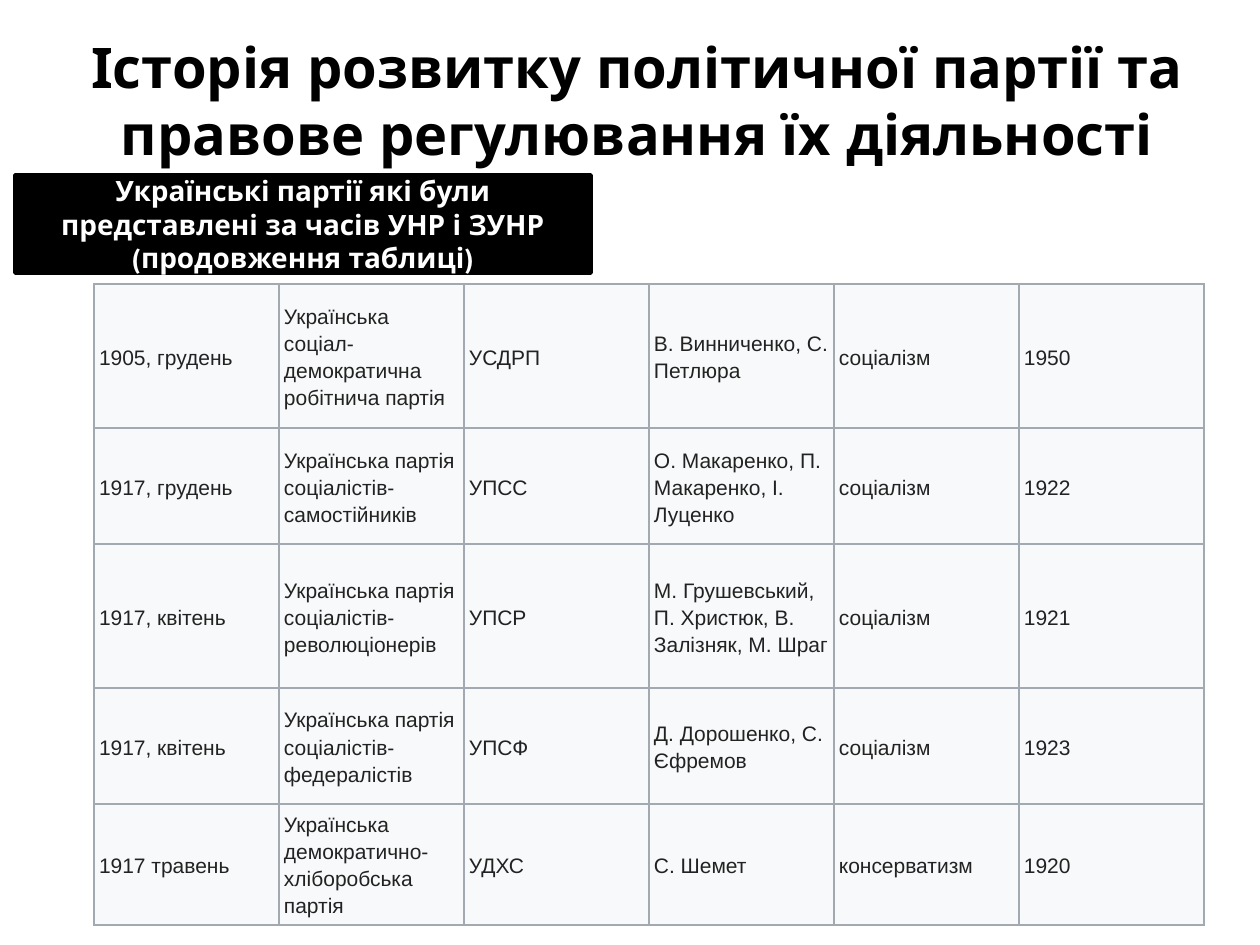
import pptx
import pptx.util
import pptx.dml.color
import pptx.enum.shapes
import pptx.enum.text
import pptx.oxml
import pptx.oxml.ns

# Content
TITLE = "Історія розвитку політичної партії та правове регулювання їх діяльності"
SUBTITLE = "Українські партії які були представлені за часів УНР і ЗУНР (продовження таблиці)"
# Founders' names are joined by no-break spaces after each comma
PARTIES = [
    ("1905, грудень", "Українська соціал-демократична робітнича партія", "УСДРП",
     "В. Винниченко, С. Петлюра", "соціалізм", "1950"),
    ("1917, грудень", "Українська партія соціалістів-самостійників", "УПСС",
     "О. Макаренко, П. Макаренко, І. Луценко", "соціалізм", "1922"),
    ("1917, квітень", "Українська партія соціалістів-революціонерів", "УПСР",
     "М. Грушевський, П. Христюк, В. Залізняк, М. Шраг", "соціалізм", "1921"),
    ("1917, квітень", "Українська партія соціалістів-федералістів", "УПСФ",
     "Д. Дорошенко, С. Єфремов", "соціалізм", "1923"),
    ("1917 травень", "Українська демократично-хліборобська партія", "УДХС",
     "С. Шемет", "консерватизм", "1920"),
]

# Layout in px
SLIDE = (1260, 945)
TITLE_BOX = (64, 26, 1146, 217)
SUBTITLE_BOX = (15, 175, 576, 98)
TABLE_LEFT, TABLE_TOP, COLUMN_WIDTH = 94, 284, 185
ROW_HEIGHTS = (144, 116, 144, 116, 120)

COLORS = {"black": "000000", "white": "FFFFFF", "cell": "F8F9FA",
          "border": "A2A9B1", "ink": "222222"}
TITLE_FONT = {"name": "League Spartan", "size": pptx.util.Pt(32), "bold": True}
SUBTITLE_FONT = {**TITLE_FONT, "size": pptx.util.Pt(16)}
CELL_FONT = {"name": "Arial", "size": pptx.util.Pt(12), "bold": False}
MIDDLE = pptx.enum.text.MSO_ANCHOR.MIDDLE
CENTER = pptx.enum.text.PP_ALIGN.CENTER
CELL_FORMAT = {"vertical_anchor": MIDDLE}
CELL_FORMAT.update({f"margin_{side}": pptx.util.Inches(inset) for side, inset in
                    (("left", 0.04), ("right", 0.04), ("top", 0.02), ("bottom", 0.02))})


def px(length):
    return pptx.util.Emu(round(length * 914400 / 126))


def rgb(color):
    return pptx.dml.color.RGBColor.from_string(COLORS[color])


def set_all(target, values):
    for attribute, value in values.items():
        setattr(target, attribute, value)


def write(frame, text, font, color, **paragraph_format):
    frame.word_wrap = True
    paragraph = frame.paragraphs[0]
    set_all(paragraph, paragraph_format)
    run = paragraph.add_run()
    run.text = text
    set_all(run.font, font)
    run.font.color.rgb = rgb(color)


def add_borders(cell):
    properties = cell._tc.get_or_add_tcPr()
    for position, side in enumerate(("lnL", "lnR", "lnT", "lnB")):
        properties.insert(position, pptx.oxml.parse_xml(
            f'<a:{side} {pptx.oxml.ns.nsdecls("a")} w="12700"><a:solidFill>'
            f'<a:srgbClr val="{COLORS["border"]}"/></a:solidFill></a:{side}>'))


presentation = pptx.Presentation()
presentation.slide_width, presentation.slide_height = map(px, SLIDE)
slide = presentation.slides.add_slide(presentation.slide_layouts[6])

# Title
title = slide.shapes.add_textbox(*map(px, TITLE_BOX))
write(title.text_frame, TITLE, TITLE_FONT, "black", alignment=CENTER)

# Subtitle banner
banner = slide.shapes.add_shape(
    pptx.enum.shapes.MSO_SHAPE.FLOWCHART_PROCESS, *map(px, SUBTITLE_BOX))
banner.shadow.inherit = False
banner.fill.solid()
banner.fill.fore_color.rgb = rgb("black")
banner.line.color.rgb = rgb("black")
banner.line.width = pptx.util.Pt(2)
banner.text_frame.vertical_anchor = MIDDLE
write(banner.text_frame, SUBTITLE, SUBTITLE_FONT, "white", alignment=CENTER)

# Table of parties
column_count = len(PARTIES[0])
parties = slide.shapes.add_table(
    len(PARTIES), column_count, px(TABLE_LEFT), px(TABLE_TOP),
    px(COLUMN_WIDTH * column_count), px(sum(ROW_HEIGHTS))).table
set_all(parties, {"first_row": False, "horz_banding": False})
for column in parties.columns:
    column.width = px(COLUMN_WIDTH)
for row_index, (height, party) in enumerate(zip(ROW_HEIGHTS, PARTIES)):
    parties.rows[row_index].height = px(height)
    for column_index, text in enumerate(party):
        cell = parties.cell(row_index, column_index)
        set_all(cell, CELL_FORMAT)
        cell.fill.solid()
        cell.fill.fore_color.rgb = rgb("cell")
        add_borders(cell)
        write(cell.text_frame, text, CELL_FONT, "ink", line_spacing=1.15)

presentation.save("out.pptx")
